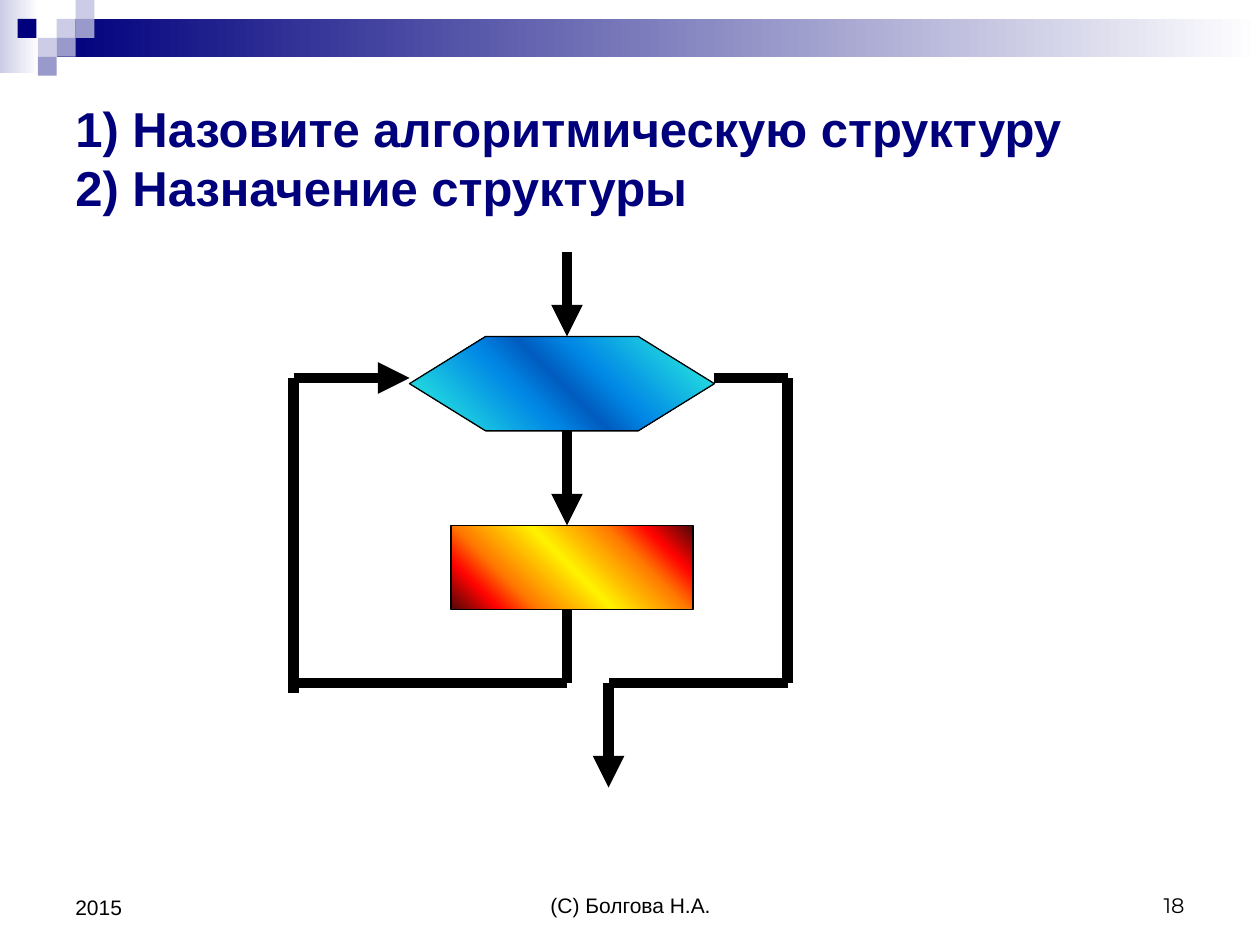
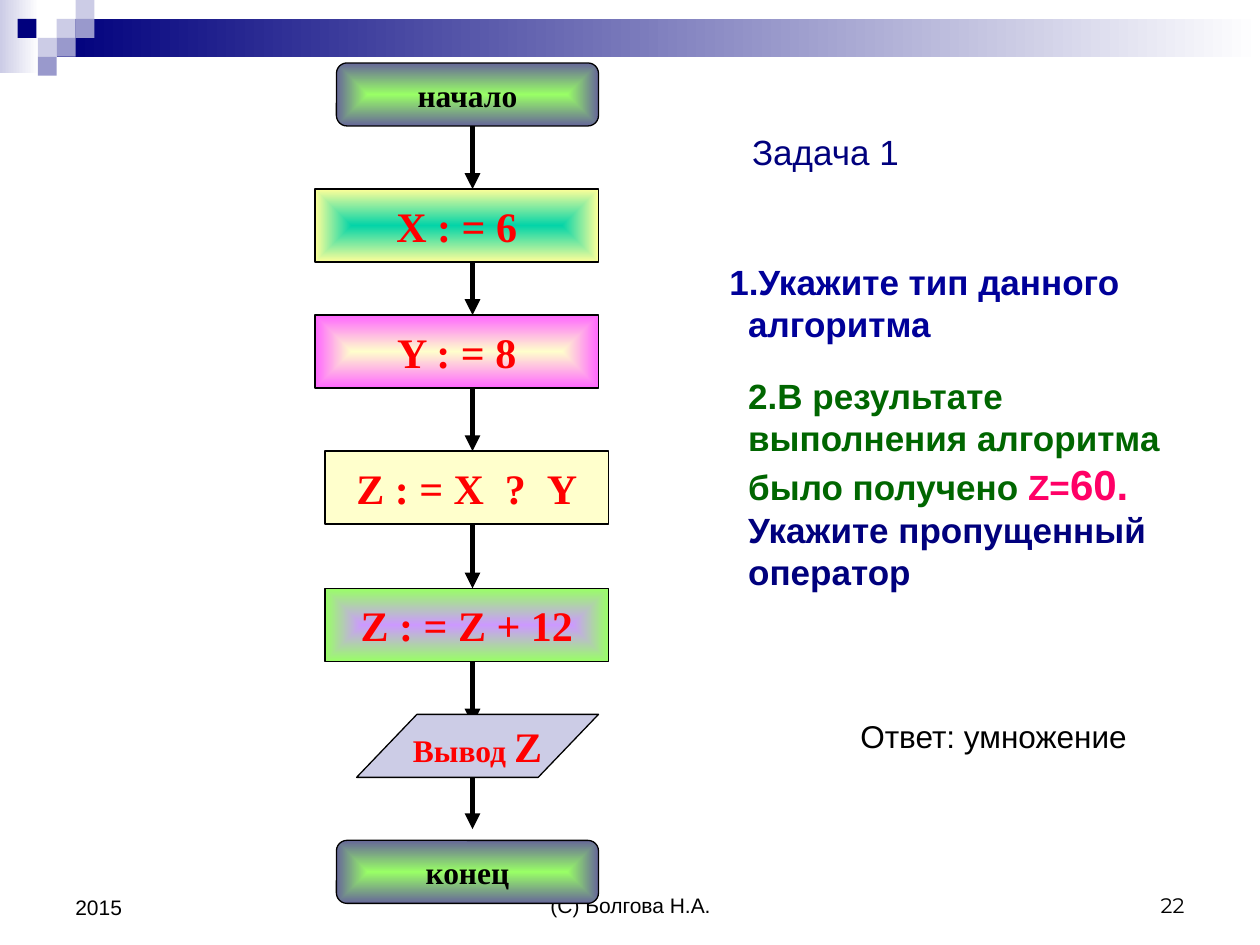
import itertools

import lxml.etree
import pptx
import pptx.dml.color
import pptx.enum.shapes
import pptx.enum.text
import pptx.oxml.ns
import pptx.util

Inches = pptx.util.Inches
Pt = pptx.util.Pt
qn = pptx.oxml.ns.qn
SHAPE = pptx.enum.shapes.MSO_SHAPE
ALIGN = pptx.enum.text.PP_ALIGN
ANCHOR = pptx.enum.text.MSO_ANCHOR

NAVY, LILAC, PALE, BLACK, RED = "00007D", "9999CC", "CCCCE6", "000000", "FF0000"
SANS, SERIF, NUMBERS = "Arial", "Times New Roman", "Montserrat"

BANDS = [
    ((0, 0, 0.31, 0.58), [(0, PALE), (100, "FFFFFF")]),
    ((0.45, 0.15, 9.55, 0.3), [(0, NAVY), (100, "FFFFFF")]),
]
TILE = 0.15
TILES = [(3, 1, PALE), (4, 0, PALE), (4, 1, LILAC), (2, 2, PALE),
         (0.93, 1, NAVY), (3, 2, LILAC), (2, 3, LILAC)]

QUESTIONS = ["1) Назовите алгоритмическую структуру", "2) Назначение структуры"]
LOOP_HEADER = (3.25, 2.67, 2.42, 0.75)
LOOP_BODY = (3.58, 4.17, 1.92, 0.67)
OCEAN = [(0, "03D4A8"), (12, "21D6E0"), (38, "0087E6"), (50, "005CBF"),
         (62, "0087E6"), (88, "21D6E0"), (100, "03D4A8")]
FIRE = [(0, "4D0808"), (15, "FF0300"), (27, "FF7A00"), (50, "FFF200"),
        (73, "FF7A00"), (85, "FF0300"), (100, "4D0808")]
LOOP_ROUTES = [
    ([(4.5, 2), (4.5, 2.67)], True),
    ([(4.5, 3.42), (4.5, 4.17)], True),
    ([(4.5, 4.83), (4.5, 5.42), (2.33, 5.42)], False),
    ([(2.33, 5.5), (2.33, 3), (3.25, 3)], True),
    ([(5.67, 3), (6.25, 3), (6.25, 5.42), (4.83, 5.42), (4.83, 6.25)], True),
]

FLOW_X = 3.75
FLOW_ARROWS = [(1, 1.5), (2.08, 2.5), (3.08, 3.58), (4.17, 4.67), (5.25, 5.75), (6.17, 6.58)]
TERMINAL = [(0, "99FF66"), (100, "666699")]
FLOW_STEPS = [
    (SHAPE.RECTANGLE, (2.5, 1.5, 2.25, 0.58), [(0, "03D4A8"), (100, "FFFF99")],
     [("Х : = 6", 24, RED)]),
    (SHAPE.RECTANGLE, (2.5, 2.5, 2.25, 0.58), [(0, "FFFFCC"), (100, "FF66FF")],
     [("Y : = 8", 24, RED)]),
    (SHAPE.RECTANGLE, (2.58, 3.58, 2.25, 0.58), "FFFFCC", [("Z : = Х  ?  Y", 24, RED)]),
    (SHAPE.RECTANGLE, (2.58, 4.67, 2.25, 0.58), [(0, "CC99FF"), (100, "99FF66")],
     [("Z : = Z + 12", 24, RED)]),
    (SHAPE.PARALLELOGRAM, (2.83, 5.67, 1.92, 0.5), PALE, [("Вывод ", 18, RED), ("Z", 24, RED)]),
    (SHAPE.FLOWCHART_ALTERNATE_PROCESS, (2.67, 0.5, 2.08, 0.5), TERMINAL,
     [("начало", 18, BLACK)]),
    (SHAPE.FLOWCHART_ALTERNATE_PROCESS, (2.67, 6.67, 2.08, 0.5), TERMINAL,
     [("конец", 18, BLACK)]),
]
TASK = [
    [("1.Укажите тип данного алгоритма", 20, "000099")],
    [("2.В результате выполнения алгоритма было получено ", 20, "006600"),
     ("Z=", 20, "FF0066"), ("60.", 24, "FF0066"), (" Укажите пропущенный оператор", 20, NAVY)],
]
LABELS = [
    ((6.73, 5.64, 2.44, 0.4), ("Ответ: умножение", 18, BLACK)),
    ((5.87, 0.99, 1.81, 0.43), ("Задача 1", 20, NAVY)),
]


def rgb(value):
    return pptx.dml.color.RGBColor.from_string(value)


def set_gradient(sp, stops, angle):
    sp.fill.background()
    spPr = sp._element.spPr
    grad = lxml.etree.Element(qn("a:gradFill"), rotWithShape="1")
    stop_list = lxml.etree.SubElement(grad, qn("a:gsLst"))
    for position, color in stops:
        gs = lxml.etree.SubElement(stop_list, qn("a:gs"), pos=str(position * 1000))
        lxml.etree.SubElement(gs, qn("a:srgbClr"), val=color)
    if angle is None:
        shade = lxml.etree.SubElement(grad, qn("a:path"))
        shade.set("path", "shape")
        lxml.etree.SubElement(shade, qn("a:fillToRect"), l="50000", t="50000",
                              r="50000", b="50000")
    else:
        lxml.etree.SubElement(grad, qn("a:lin"), ang=str(angle * 60000), scaled="0")
    spPr.replace(spPr.find(qn("a:noFill")), grad)


def add_box(s, kind, box, fill, angle=None, outlined=True, adjust=None):
    sp = s.shapes.add_shape(kind, *map(Inches, box))
    sp.shadow.inherit = False
    if adjust is not None:
        sp.adjustments[0] = adjust
    if isinstance(fill, str):
        sp.fill.solid()
        sp.fill.fore_color.rgb = rgb(fill)
    else:
        set_gradient(sp, fill, angle)
    if outlined:
        sp.line.color.rgb = rgb(BLACK)
        sp.line.width = Pt(0.75)
    else:
        sp.line.fill.background()
    return sp


def write(tf, paragraphs, font=SANS, bold=False, align=ALIGN.LEFT, anchor=ANCHOR.MIDDLE):
    tf.vertical_anchor = anchor
    for i, runs in enumerate(paragraphs):
        p = tf.add_paragraph() if i else tf.paragraphs[0]
        p.alignment = align
        for text, size, color in runs:
            r = p.add_run()
            r.text = text
            r.font.name = font
            r.font.size = Pt(size)
            r.font.bold = bold
            r.font.color.rgb = rgb(color)


def add_text(s, box, paragraphs, **style):
    tf = s.shapes.add_textbox(*map(Inches, box)).text_frame
    tf.word_wrap = True
    write(tf, paragraphs, **style)
    return tf


def add_line(s, start, end, width, arrow):
    cx = s.shapes.add_connector(pptx.enum.shapes.MSO_CONNECTOR.STRAIGHT,
                                *map(Inches, start + end))
    cx.line.color.rgb = rgb(BLACK)
    cx.line.width = Pt(width)
    if arrow:
        lxml.etree.SubElement(cx.line._get_or_add_ln(), qn("a:tailEnd"), type="triangle")
    lxml.etree.SubElement(cx._element.spPr, qn("a:effectLst"))


def new_slide(prs, number):
    s = prs.slides.add_slide(prs.slide_layouts[6])
    for box, stops in BANDS:
        add_box(s, SHAPE.RECTANGLE, box, stops, angle=0, outlined=False)
    for column, row, color in TILES:
        add_box(s, SHAPE.RECTANGLE, (column * TILE, row * TILE, TILE, TILE), color,
                outlined=False)
    footers = [
        ((3.42, 6.83, 3.17, 0.5), "(С) Болгова Н.А.", SANS, ALIGN.CENTER),
        ((7.17, 6.83, 2.33, 0.5), number, NUMBERS, ALIGN.RIGHT),
        ((0.5, 6.83, 2.33, 0.52), "2015", SANS, ALIGN.LEFT),
    ]
    for box, text, font, align in footers:
        add_text(s, box, [[(text, 12, BLACK)]], font=font, align=align, anchor=ANCHOR.BOTTOM)
    return s


def build_loop_slide(prs):
    s = new_slide(prs, "18")
    add_text(s, (0.5, 0.5, 9, 1.5), [[(q, 28, NAVY)] for q in QUESTIONS], bold=True)
    add_box(s, SHAPE.HEXAGON, LOOP_HEADER, OCEAN, angle=315, adjust=0.806)
    add_box(s, SHAPE.RECTANGLE, LOOP_BODY, FIRE, angle=315)
    for points, arrow in LOOP_ROUTES:
        for start, end in itertools.pairwise(points):
            add_line(s, start, end, 6, arrow and end == points[-1])


def build_task_slide(prs):
    s = new_slide(prs, "22")
    tf = add_text(s, (4.92, 2.02, 4.83, 3), TASK, bold=True, anchor=ANCHOR.TOP)
    for p, indent in zip(tf.paragraphs, (-0.15, 0)):
        pPr = p._p.get_or_add_pPr()
        pPr.set("marL", str(Inches(0.92)))
        pPr.set("indent", str(Inches(indent)))
    tf.paragraphs[1].space_before = Pt(17)
    for top, bottom in FLOW_ARROWS:
        add_line(s, (FLOW_X, top), (FLOW_X, bottom), 3, True)
    for kind, box, fill, runs in FLOW_STEPS:
        adjust = 0.958 if kind == SHAPE.PARALLELOGRAM else None
        sp = add_box(s, kind, box, fill, adjust=adjust)
        sp.text_frame.word_wrap = False
        write(sp.text_frame, [runs], font=SERIF, bold=True, align=ALIGN.CENTER)
    for box, run in LABELS:
        add_text(s, box, [[run]], anchor=ANCHOR.TOP)


def main():
    prs = pptx.Presentation()
    prs.slide_width, prs.slide_height = Inches(10), Inches(7.5)
    build_loop_slide(prs)
    build_task_slide(prs)
    prs.save("out.pptx")


if __name__ == "__main__":
    main()
